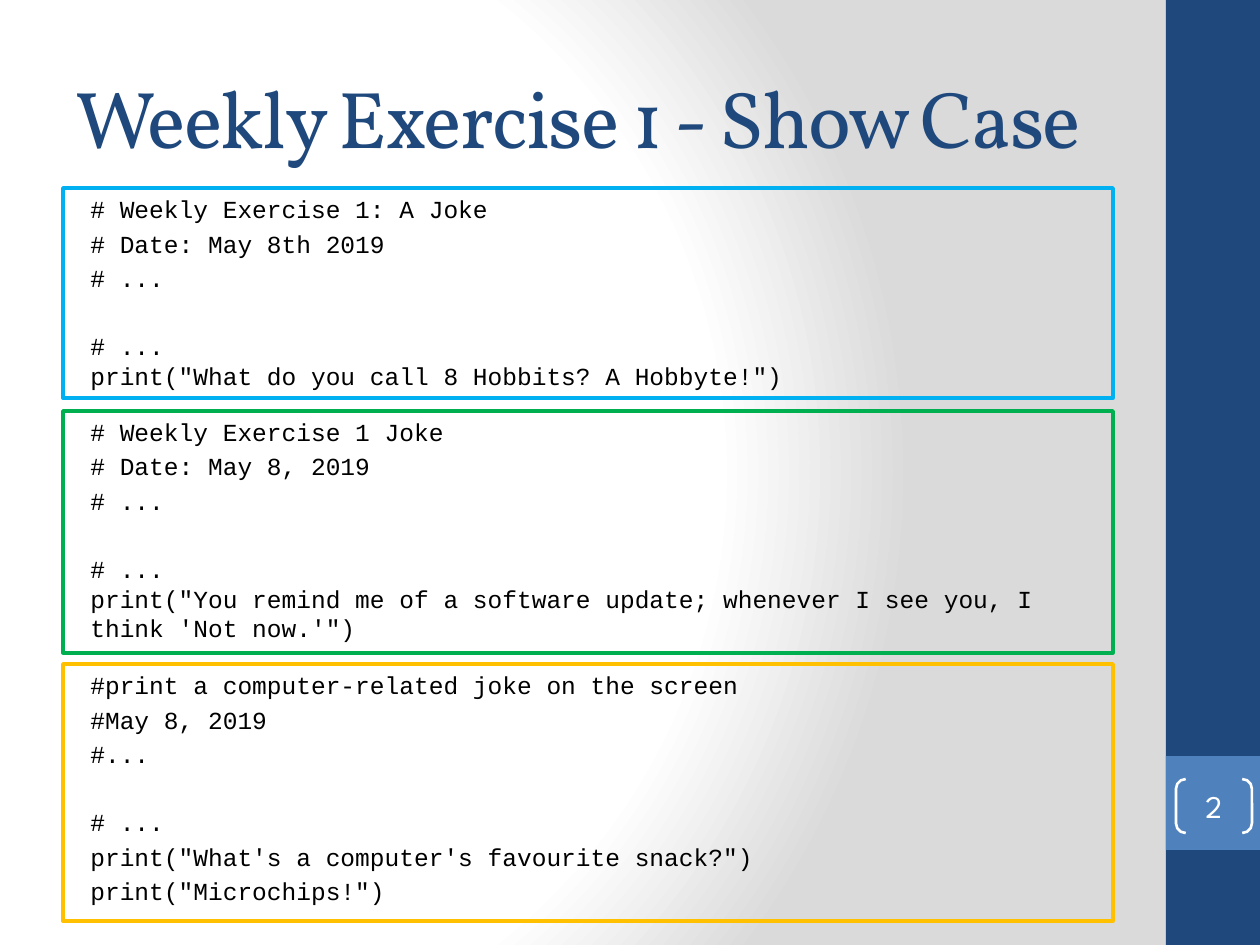
from lxml import etree
from pptx import Presentation
from pptx.dml.color import RGBColor
from pptx.enum.shapes import MSO_SHAPE as SHAPE
from pptx.enum.text import MSO_ANCHOR as ANCHOR, PP_ALIGN as ALIGN
from pptx.oxml import parse_xml
from pptx.oxml.ns import nsdecls
from pptx.util import Emu, Pt

PX = 914400 / 126
NAVY, BLUE, WHITE = "1F497D", "4F81BD", "FFFFFF"


def rgb(color):
    return RGBColor.from_string(color)


def add_shape(kind, box, fill=None, line=None, width=2):
    sp = s.shapes.add_shape(kind, *[Emu(round(v * PX)) for v in box])
    sp.shadow.inherit = False
    if fill:
        sp.fill.solid()
        sp.fill.fore_color.rgb = rgb(fill)
    else:
        sp.fill.background()
    if line:
        sp.line.color.rgb = rgb(line)
        sp.line.width = Pt(width)
    else:
        sp.line.fill.background()
    return sp


prs = Presentation()
prs.slide_width, prs.slide_height = Emu(round(1260 * PX)), Emu(round(945 * PX))
s = prs.slides.add_slide(prs.slide_layouts[6])

# Background: radial gradient, white to grey
stops = "".join(
    f'<a:gs pos="{pos}000"><a:srgbClr val="{color}"/></a:gs>'
    for pos, color in [(0, WHITE), (75, WHITE), (100, "DADADA")])
s.element.cSld.insert(0, parse_xml(
    f'<p:bg {nsdecls("p", "a")}><p:bgPr><a:gradFill><a:gsLst>{stops}</a:gsLst>'
    '<a:path path="circle">'
    '<a:fillToRect l="20000" t="50000" r="100000" b="50000"/></a:path>'
    '</a:gradFill><a:effectLst/></p:bgPr></p:bg>'))

# Sidebar
add_shape(SHAPE.RECTANGLE, (1166, 0, 94, 945), NAVY)
add_shape(SHAPE.RECTANGLE, (1166, 756, 94, 94), BLUE)

# Title
title = s.shapes.add_textbox(*[Emu(round(v * PX)) for v in (63, 38, 1097, 156)])
tf = title.text_frame
tf.word_wrap = True
tf.vertical_anchor = ANCHOR.MIDDLE
p = tf.paragraphs[0]
r = p.add_run()
r.text = "Weekly Exercise 1 - Show Case"
r.font.name, r.font.size = "Vollkorn", Pt(46)
r.font.color.rgb = rgb(NAVY)
r.font._element.set("spc", "-100")

# Code boxes: top, height, border, header comments, code after the gap
code_boxes = [
    (188, 210, "00B0F0",
     ["# Weekly Exercise 1: A Joke", "# Date: May 8th 2019", "# ..."],
     ['# ...\nprint("What do you call 8 Hobbits? A Hobbyte!")']),
    (411, 242, "00B050",
     ["# Weekly Exercise 1 Joke", "# Date: May 8, 2019", "# ..."],
     ['# ...\nprint("You remind me of a software update; '
      'whenever I see you, I think \'Not now.\'")']),
    (664, 257, "FFC000",
     ["#print a computer-related joke on the screen", "#May 8, 2019", "#..."],
     ["# ...", 'print("What\'s a computer\'s favourite snack?")',
      'print("Microchips!")']),
]
for top, height, border, header, code in code_boxes:
    sp = add_shape(SHAPE.RECTANGLE, (63, top, 1050, height), line=border)
    tf = sp.text_frame
    tf.word_wrap = True
    tf.vertical_anchor = ANCHOR.TOP
    for i, text in enumerate(header + code):
        p = tf.paragraphs[0] if i == 0 else tf.add_paragraph()
        p.text = text
        p.alignment = ALIGN.LEFT
        p.space_before = Pt(22.4 if i == len(header) else 2.8)
        p.font.name, p.font.size = "Courier New", Pt(14)
        p.font.color.rgb = rgb("000000")
        p._p.get_or_add_pPr().set("marL", str(round(15 * PX)))

# Slide number
sp = add_shape(SHAPE.DOUBLE_BRACKET, (1176, 779, 76, 54), line=WHITE, width=1.5)
sp.adjustments[0] = 0.18
tf = sp.text_frame
tf.margin_left = tf.margin_right = tf.margin_top = tf.margin_bottom = 0
tf.vertical_anchor = ANCHOR.MIDDLE
p = tf.paragraphs[0]
p.text = "2"
p.alignment = ALIGN.CENTER
p.font.name, p.font.size = "League Spartan", Pt(18)
p.font.color.rgb = rgb(WHITE)

prs.save("out.pptx")
